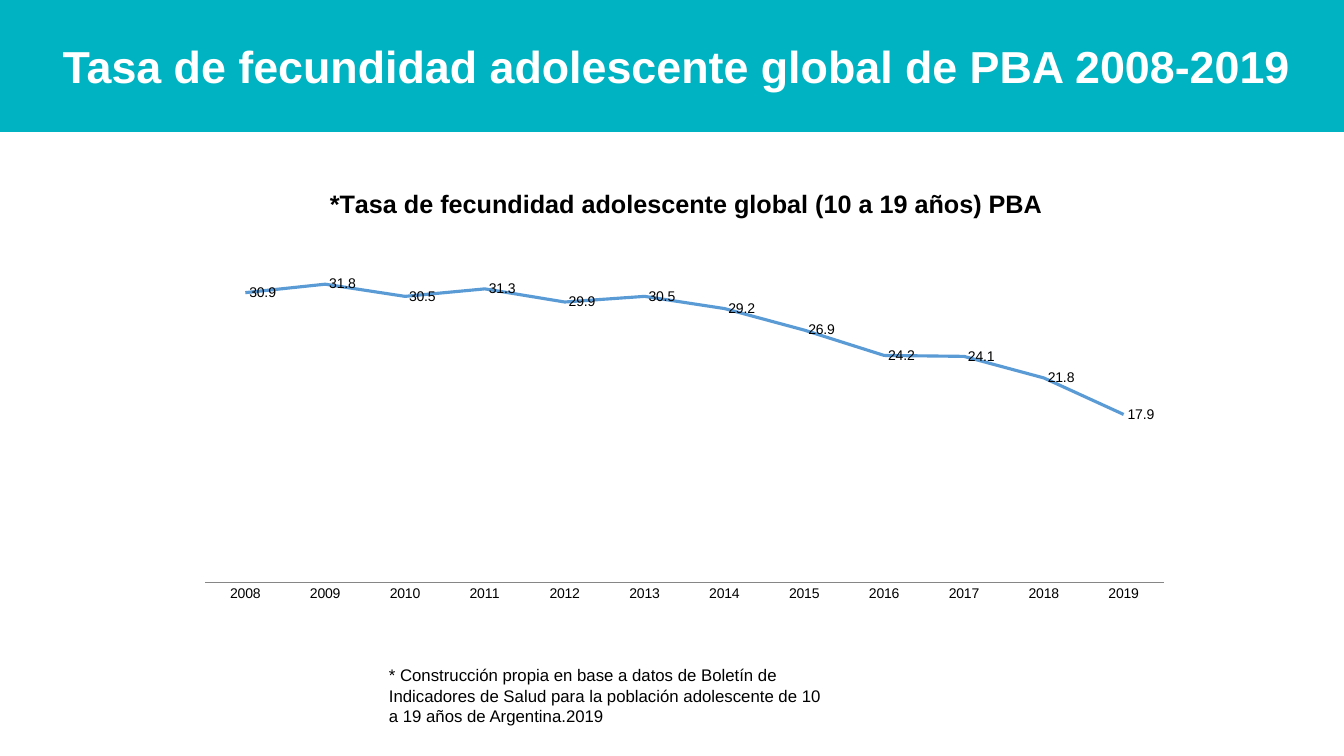
from lxml import etree
from pptx import Presentation
from pptx import util as u
from pptx.chart.data import CategoryChartData
from pptx.dml.color import RGBColor
from pptx.enum import chart as ch, text
from pptx.oxml.ns import qn

TITLE = "Tasa de fecundidad adolescente global de PBA 2008-2019"
CHART_TITLE = "*Tasa de fecundidad adolescente global (10 a 19 años) PBA"
NOTE = ("* Construcción propia en base a datos de Boletín de Indicadores de Salud "
        "para la población adolescente de 10 a 19 años de Argentina.2019")
YEARS = [str(y) for y in range(2008, 2020)]
RATES = [30.9, 31.8, 30.5, 31.3, 29.9, 30.5, 29.2, 26.9, 24.2, 24.1, 21.8, 17.9]
COLORS = {"banner": "00B3C2", "white": "FFFFFF", "black": "000000",
          "line": "5B9BD5", "axis": "868686"}
FONT = "Arial"
BANNER = (0, 0, 960, 94.3)
CHART = (132.5, 117.4, 713, 321)
NOTE_BOX = (270.7, 471.6, 328.3, 51.1)


def color(name):
    return RGBColor.from_string(COLORS[name])


def pts(box):
    return [u.Pt(v) for v in box]


def style(font, size, name, bold=False):
    font.name, font.size, font.bold = FONT, u.Pt(size), bold
    font.color.rgb = color(name)


def add_layout(parent, index, **values):
    for old in parent.findall(qn("c:layout")):
        parent.remove(old)
    layout = etree.Element(qn("c:layout"))
    manual = etree.SubElement(layout, qn("c:manualLayout"))
    for tag, val in values.items():
        etree.SubElement(manual, qn("c:" + tag)).set("val", str(val))
    parent.insert(index, layout)


prs = Presentation()
prs.slide_width, prs.slide_height = u.Pt(960), u.Pt(540)
s = prs.slides.add_slide(prs.slide_layouts[5])

title = s.shapes.title
title.left, title.top, title.width, title.height = pts(BANNER)
title.fill.solid()
title.fill.fore_color.rgb = color("banner")
tf = title.text_frame
tf.text = TITLE
tf.margin_left = u.Pt(14.4)
tf.vertical_anchor = text.MSO_ANCHOR.MIDDLE
tf.auto_size = text.MSO_AUTO_SIZE.NONE
p = tf.paragraphs[0]
p.alignment = text.PP_ALIGN.CENTER
style(p.font, 32, "white", True)

data = CategoryChartData()
data.categories = YEARS
data.add_series("Series 1", RATES)
chart = s.shapes.add_chart(ch.XL_CHART_TYPE.LINE, *pts(CHART), data).chart
style(chart.font, 10, "black")
chart.has_legend = False
chart.has_title = True
tf = chart.chart_title.text_frame
tf.text = CHART_TITLE
style(tf.paragraphs[0].font, 18, "black", True)
chart_title = chart._chartSpace.chart.find(qn("c:title"))
add_layout(chart_title, 1, xMode="edge", yMode="edge", x=0.14, y=0.04)
add_layout(chart._chartSpace.chart.plotArea, 0, layoutTarget="inner",
           xMode="edge", yMode="edge", x=0.02, y=0.2, w=0.96, h=0.73)

axis = chart.category_axis
axis.major_tick_mark = ch.XL_TICK_MARK.NONE
axis.format.line.color.rgb = color("axis")
axis.format.line.width = u.Pt(0.75)
values = chart.value_axis
values.minimum_scale, values.maximum_scale = 0, 35
values.has_major_gridlines = False
values.visible = False

plot = chart.plots[0]
plot.vary_by_categories = False
series = plot.series[0]
series.smooth = False
series.marker.style = ch.XL_MARKER_STYLE.NONE
series.format.line.color.rgb = color("line")
series.format.line.width = u.Pt(2.25)
labels = series.data_labels
labels.show_value = True
labels.number_format, labels.number_format_is_linked = "0.0", False
labels.position = ch.XL_LABEL_POSITION.RIGHT
style(labels.font, 10, "black")

tf = s.shapes.add_textbox(*pts(NOTE_BOX)).text_frame
tf.word_wrap = True
tf.auto_size = text.MSO_AUTO_SIZE.SHAPE_TO_FIT_TEXT
tf.text = NOTE
style(tf.paragraphs[0].font, 12, "black")

prs.save("out.pptx")
